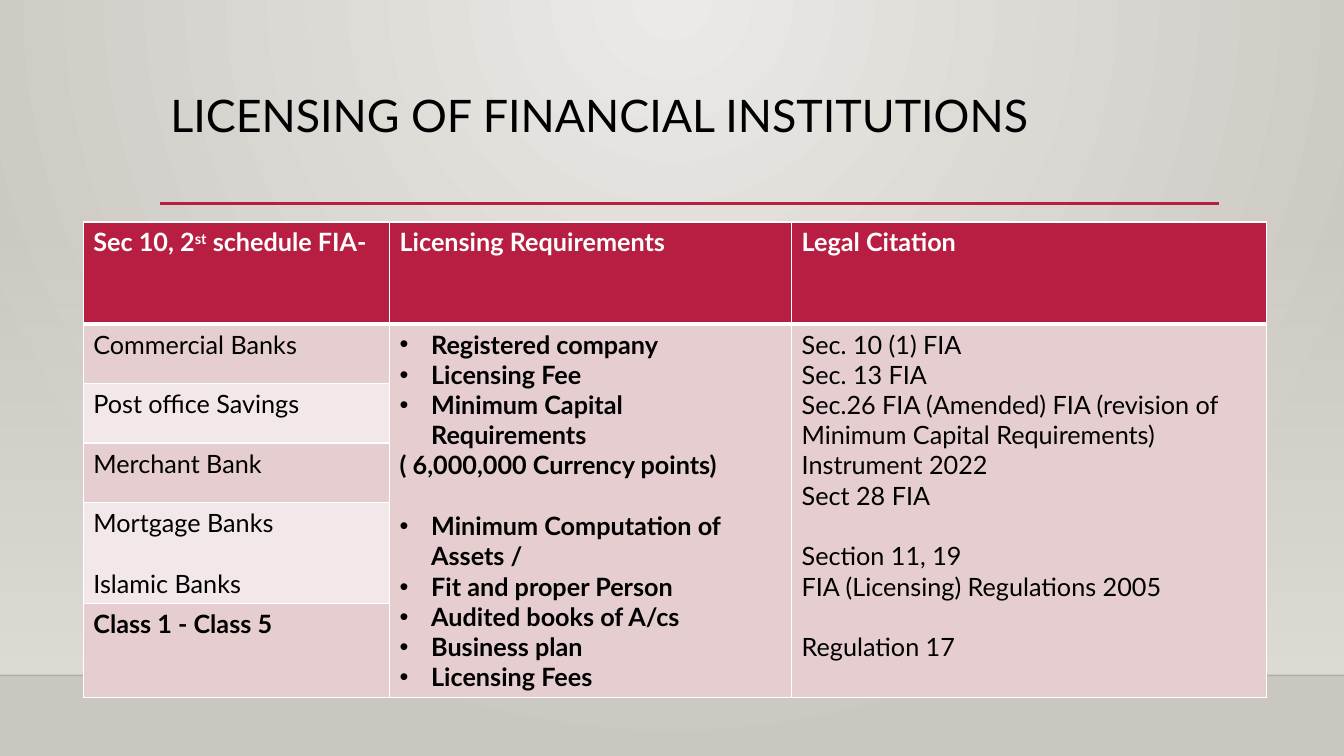
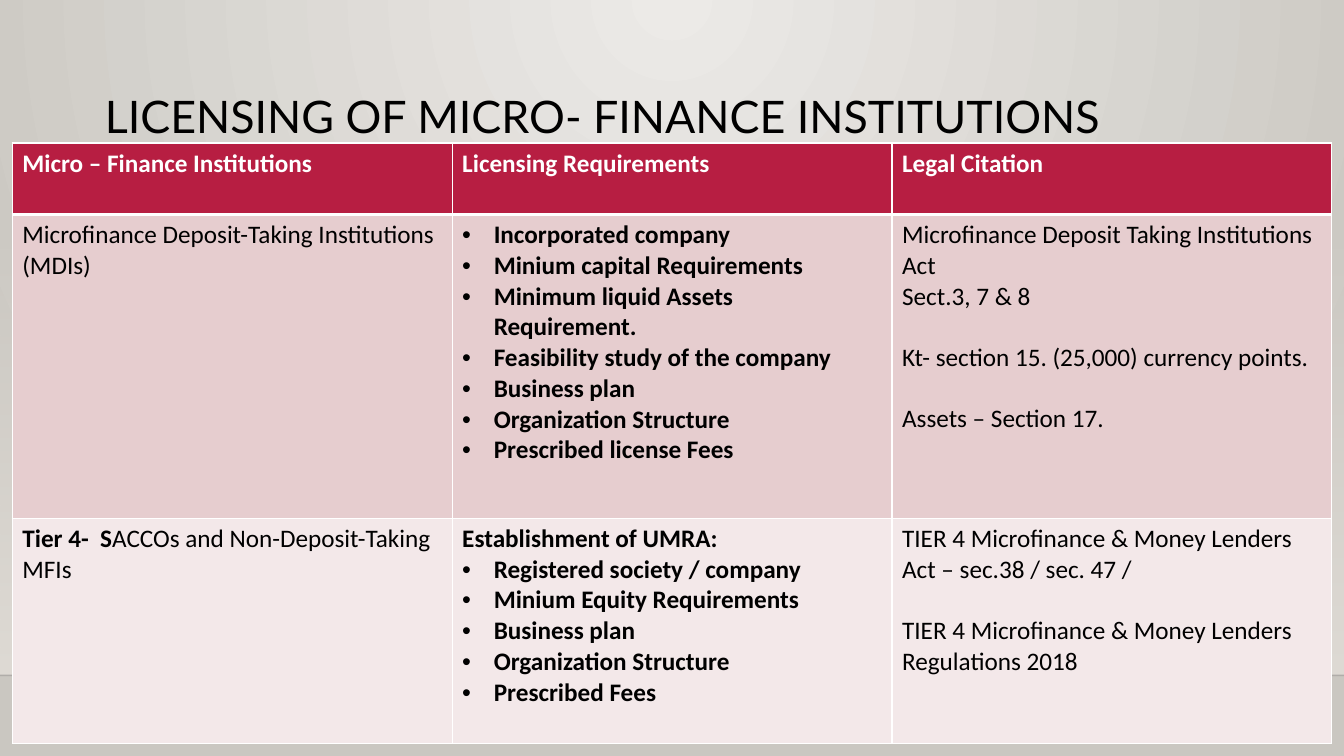
"""Build two slides of tables on licensing financial and micro-finance institutions."""
from dataclasses import dataclass

from lxml import etree
from pptx import Presentation
from pptx.dml import color as dml
from pptx.enum import shapes, text
from pptx.oxml import ns
from pptx.util import Pt

CRIMSON, ROSE, BLUSH = "B71E42", "E6CDCF", "F3E8E9"
WHITE, BLACK, SAND = "FFFFFF", "000000", "DFDBD5"
WIDTH, HEIGHT = 960, 540
SIZE, BLANK_LINE, INDENT = 18, 21.8, 22.5


@dataclass(frozen=True)
class Piece:
    """A stretch of text in one format."""
    words: str
    bold: bool = False
    raised: bool = False


@dataclass(frozen=True)
class Para:
    """A paragraph, with an optional bullet and a gap of one line above it."""
    pieces: tuple[Piece, ...]
    bullet: bool = False
    gap: bool = False


@dataclass(frozen=True)
class Page:
    """One slide: its title and its table."""
    title: str
    title_box: tuple[float, float, float, float]
    font: str
    corner: tuple[float, float]
    columns: tuple[float, ...]
    heights: tuple[float, ...]
    rows: list[list[list[Para]]]
    tall_columns: tuple[int, ...] = ()


def plain(words: str, gap: bool = False) -> Para:
    """Return a regular paragraph."""
    return Para((Piece(words),), gap=gap)


def strong(words: str) -> Para:
    """Return a bold paragraph."""
    return Para((Piece(words, bold=True),))


def point(words: str, gap: bool = False) -> Para:
    """Return a bold bullet point."""
    return Para((Piece(words, bold=True),), bullet=True, gap=gap)


def colour(code: str) -> dml.RGBColor:
    """Turn a hex string into a colour."""
    return dml.RGBColor.from_string(code)


def add_child(parent, tag: str, **attributes: str):
    """Append a drawing element and return it."""
    child = etree.SubElement(parent, ns.qn(tag))
    for key, value in attributes.items():
        child.set(key, value)
    return child


def set_alpha(element, place: int, percent: int) -> None:
    """Make one of an element's colours transparent."""
    hue = list(element.iter(ns.qn("a:srgbClr")))[place]
    add_child(hue, "a:alpha", val=str(percent * 1000))


def set_stops(fill, codes: tuple[str, str]) -> None:
    """Give a fill a gradient of two colours."""
    fill.gradient()
    for stop, code in zip(fill.gradient_stops, codes):
        stop.color.rgb = colour(code)


def add_rule(slide, left: float, right: float, y: float, code: str, weight: float):
    """Draw a horizontal line."""
    rule = slide.shapes.add_connector(
        shapes.MSO_CONNECTOR.STRAIGHT, Pt(left), Pt(y), Pt(right), Pt(y))
    rule.line.color.rgb = colour(code)
    rule.line.width = Pt(weight)
    add_child(rule.element.spPr, "a:effectLst")
    return rule


def dress_layout(layout, slide) -> None:
    """Put the shared background, wall and rules on the layout."""
    set_stops(layout.background.fill, ("ECEAE7", "CAC7C1"))
    gradient = next(layout.element.iter(ns.qn("a:gradFill")))
    gradient.remove(gradient.find(ns.qn("a:lin")))
    glow = add_child(gradient, "a:path", path="circle")
    add_child(glow, "a:fillToRect", l="43000", t="0", r="43000", b="100000")

    wall = slide.shapes.add_shape(
        shapes.MSO_SHAPE.RECTANGLE, 0, Pt(159), Pt(WIDTH), Pt(323.4))
    wall.shadow.inherit = False
    wall.line.fill.background()
    set_stops(wall.fill, (SAND, SAND))
    wall.fill.gradient_angle = 270
    set_alpha(wall.element.spPr, 0, 0)

    floor = add_rule(slide, 0, WIDTH, 482.4, "000001", 1)
    set_alpha(floor.element.spPr, 0, 20)
    underline = add_rule(slide, 114.5, 871, 145.4, CRIMSON, 2.5)
    for number, item in enumerate((wall, floor, underline), start=20):
        next(item.element.iter(ns.qn("p:cNvPr"))).set("id", str(number))
        layout.shapes.element.append(item.element)


def write_title(slide, page: Page) -> None:
    """Place and write the slide title."""
    title = slide.shapes.title
    title.left, title.top, title.width, title.height = map(Pt, page.title_box)
    frame = title.text_frame
    frame.word_wrap = True
    frame.auto_size = text.MSO_AUTO_SIZE.NONE
    frame.vertical_anchor = text.MSO_ANCHOR.TOP
    heading = frame.paragraphs[0]
    heading.alignment = text.PP_ALIGN.LEFT
    heading.line_spacing = 0.9
    run = heading.add_run()
    run.text = page.title
    run.font.name, run.font.size = page_font(run, "Lato", BLACK), Pt(32)


def page_font(run, name: str, code: str) -> str:
    """Colour a run and return its font name."""
    run.font.color.rgb = colour(code)
    return name


def write_cell(cell, paras: list[Para], font: str, ink: str) -> None:
    """Write the paragraphs of one cell."""
    frame = cell.text_frame
    for index, para in enumerate(paras):
        line = frame.add_paragraph() if index else frame.paragraphs[0]
        if para.bullet:
            props = line._p.get_or_add_pPr()
            props.set("marL", str(Pt(INDENT)))
            props.set("indent", str(-Pt(INDENT)))
            add_child(props, "a:buFont", typeface="Arial")
            add_child(props, "a:buChar", char="•")
        if para.gap:
            line.space_before = Pt(BLANK_LINE)
        for piece in para.pieces:
            run = line.add_run()
            run.text = piece.words
            run.font.name, run.font.size = page_font(run, font, ink), Pt(SIZE)
            run.font.bold = piece.bold
            if piece.raised:
                run._r.get_or_add_rPr().set("baseline", "30000")


def style_cell(cell, row: int) -> None:
    """Draw white borders and the fill of a cell's row."""
    props = cell._tc.get_or_add_tcPr()
    for side in "LRTB":
        thick = (row == 0 and side == "B") or (row == 1 and side == "T")
        border = add_child(props, f"a:ln{side}", w=str(Pt(3 if thick else 1)))
        paint = add_child(border, "a:solidFill")
        add_child(paint, "a:srgbClr", val=WHITE)
    cell.fill.solid()
    band = ROSE if row % 2 else BLUSH
    cell.fill.fore_color.rgb = colour(band if row else CRIMSON)


def draw_table(slide, page: Page) -> None:
    """Draw the table of a page."""
    left, top = page.corner
    grid = slide.shapes.add_table(
        len(page.heights), len(page.columns), Pt(left), Pt(top),
        Pt(sum(page.columns)), Pt(sum(page.heights))).table
    for column, width in zip(grid.columns, page.columns):
        column.width = Pt(width)
    for row, height in zip(grid.rows, page.heights):
        row.height = Pt(height)
    for r in range(len(page.heights)):
        for c in range(len(page.columns)):
            style_cell(grid.cell(r, c), r)
    for c in page.tall_columns:
        grid.cell(1, c).merge(grid.cell(len(page.heights) - 1, c))
    for r, entries in enumerate(page.rows):
        for c, paras in enumerate(entries):
            write_cell(grid.cell(r, c), paras, page.font, BLACK if r else WHITE)


SHARED_HEADS = [[strong("Licensing Requirements")], [strong("Legal Citation")]]

BANKS = Page(
    title="LICENSING OF FINANCIAL INSTITUTIONS",
    title_box=(114.5, 63.4, 756, 82.8),
    font="Lato",
    corner=(59.5, 158.5),
    columns=(218.8, 287.2, 339),
    heights=(73, 42.5, 42.5, 42.5, 72, 67),
    tall_columns=(1, 2),
    rows=[
        [[Para((Piece("Sec 10, 2", bold=True), Piece("st", bold=True, raised=True),
                Piece(" schedule FIA-", bold=True)))], *SHARED_HEADS],
        [[plain("Commercial Banks")],
         [point("Registered company"),
          point("Licensing Fee"),
          point("Minimum Capital Requirements"),
          strong("( 6,000,000 Currency points)"),
          point("Minimum Computation of Assets /", gap=True),
          point("Fit and proper Person"),
          point("Audited books of A/cs"),
          point("Business plan"),
          point("Licensing Fees")],
         [plain("Sec. 10 (1) FIA"),
          plain("Sec. 13 FIA"),
          plain("Sec.26 FIA (Amended) FIA (revision of Minimum Capital "
                "Requirements) Instrument 2022"),
          plain("Sect 28 FIA"),
          plain("Section 11, 19", gap=True),
          plain("FIA (Licensing) Regulations 2005"),
          plain("Regulation 17", gap=True)]],
        [[plain("Post office Savings")]],
        [[plain("Merchant Bank")]],
        [[plain("Mortgage Banks"), plain("Islamic Banks", gap=True)]],
        [[strong("Class 1 - Class 5")]],
    ],
)

MICRO_FINANCE = Page(
    title="LICENSING OF MICRO- FINANCE INSTITUTIONS",
    title_box=(67.7, 64, 802.8, 63.4),
    font="Calibri",
    corner=(8.8, 102.2),
    columns=(314.2,) * 3,
    heights=(51, 217, 161),
    rows=[
        [[strong("Micro – Finance Institutions")], *SHARED_HEADS],
        [[plain("Microfinance Deposit-Taking Institutions (MDIs)")],
         [point("Incorporated company"),
          point("Minium capital Requirements"),
          point("Minimum liquid Assets Requirement."),
          point("Feasibility study of the company"),
          point("Business plan"),
          point("Organization Structure"),
          point("Prescribed license Fees")],
         [plain("Microfinance Deposit Taking Institutions Act"),
          plain("Sect.3, 7 & 8"),
          plain("Kt- section 15. (25,000) currency points.", gap=True),
          plain("Assets – Section 17.", gap=True)]],
        [[Para((Piece("Tier 4-  S", bold=True),
                Piece("ACCOs and Non-Deposit-Taking MFIs")))],
         [strong("Establishment of UMRA:"),
          point("Registered society / company"),
          point("Minium Equity Requirements"),
          point("Business plan"),
          point("Organization Structure"),
          point("Prescribed Fees")],
         [plain("TIER 4 Microfinance & Money Lenders Act – sec.38 / sec. 47 /"),
          plain("TIER 4 Microfinance & Money Lenders Regulations 2018", gap=True)]],
    ],
)


def main() -> None:
    """Build and save the presentation."""
    deck = Presentation()
    deck.slide_width, deck.slide_height = Pt(WIDTH), Pt(HEIGHT)
    layout = deck.slide_layouts[5]
    pages = (BANKS, MICRO_FINANCE)
    slides = [deck.slides.add_slide(layout) for _ in pages]
    dress_layout(layout, slides[0])
    for slide, page in zip(slides, pages):
        write_title(slide, page)
        draw_table(slide, page)
    deck.save("out.pptx")


if __name__ == "__main__":
    main()
